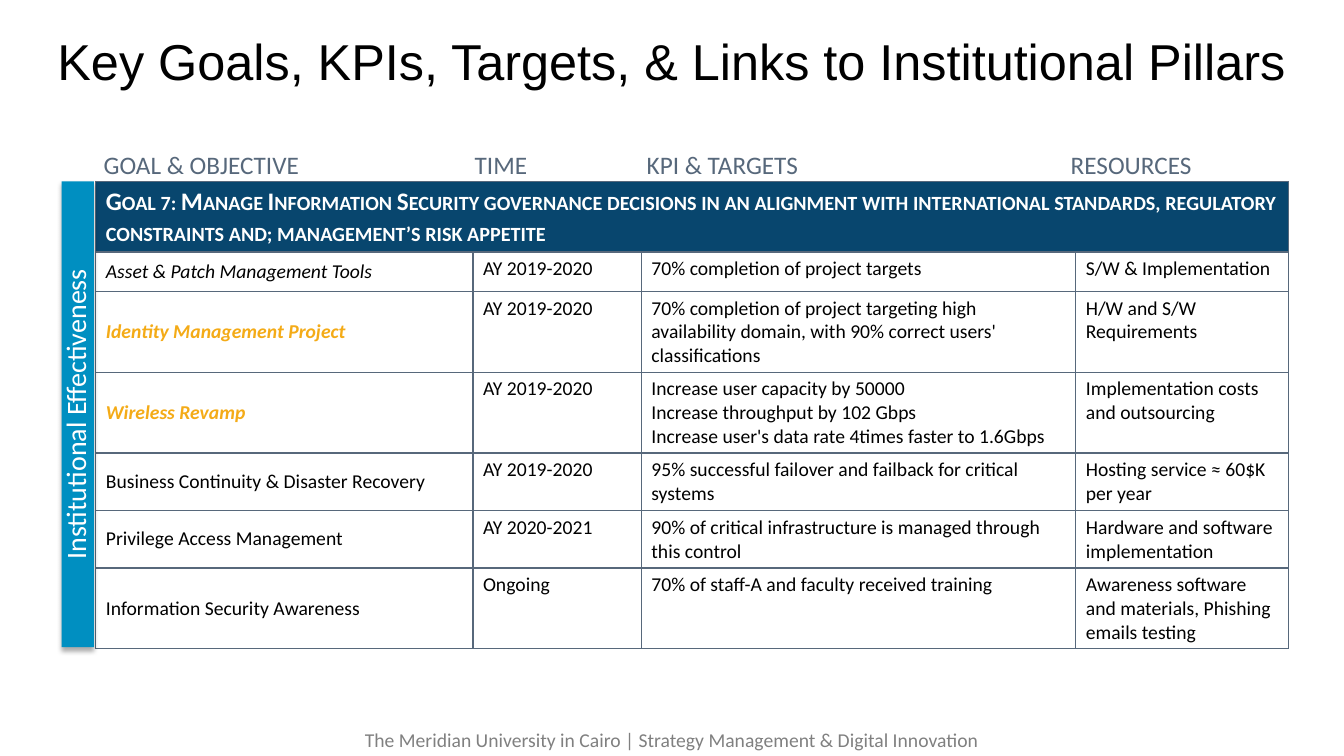
from lxml import etree
from pptx import Presentation
from pptx.dml.color import RGBColor
from pptx.enum.shapes import MSO_SHAPE
from pptx.enum.text import MSO_ANCHOR, PP_ALIGN
from pptx.oxml.ns import qn
from pptx.util import Inches, Pt

CENTER, LEFT = PP_ALIGN.CENTER, PP_ALIGN.LEFT
MIDDLE, TOP = MSO_ANCHOR.MIDDLE, MSO_ANCHOR.TOP
RECTANGLE = MSO_SHAPE.RECTANGLE

SLATE, NAVY, BLUE, AMBER = "57687B", "08466E", "008FC1", "F4AB17"
WHITE, BLACK, GRAY = "FFFFFF", "000000", "808080"

TABLE_LEFT, TABLE_TOP = 7.13, 24
COLUMN_WIDTHS = [28.06, 12.53, 32.33, 15.83]
ROW_HEIGHTS = [9.3, 5.2, 10.7, 10.7, 7.6, 7.6, 10.7]
HEADINGS = ["GOAL & OBJECTIVE", "TIME", "KPI & TARGETS", "RESOURCES"]
HEADING_STOPS = [27.6, 40.4, 71.95]
GOAL = ("Goal 7: Manage Information Security governance decisions in an alignment "
        "with international standards, regulatory constraints and; "
        "management’s risk appetite")
OBJECTIVES = [
    ("Asset & Patch Management Tools", "AY 2019-2020",
     "70% completion of project targets", "S/W & Implementation"),
    ("Identity Management Project", "AY 2019-2020",
     "70% completion of project targeting high availability domain, "
     "with 90% correct users' classifications", "H/W and S/W Requirements"),
    ("Wireless Revamp", "AY 2019-2020",
     "Increase user capacity by 50000\nIncrease throughput by 102 Gbps\n"
     "Increase user's data rate 4times faster to 1.6Gbps",
     "Implementation costs and outsourcing"),
    ("Business Continuity & Disaster Recovery", "AY 2019-2020",
     "95% successful failover and failback for critical systems",
     "Hosting service ≈ 60$K per year"),
    ("Privilege Access Management", "AY 2020-2021",
     "90% of critical infrastructure is managed through this control",
     "Hardware and software implementation"),
    ("Information Security Awareness", "Ongoing",
     "70% of staff-A and faculty received training",
     "Awareness software and materials, Phishing emails testing"),
]
HIGHLIGHT = {"color": AMBER, "bold": True, "italic": True}
OBJECTIVE_STYLES = {
    "Asset & Patch Management Tools": {"italic": True},
    "Identity Management Project": HIGHLIGHT,
    "Wireless Revamp": HIGHLIGHT,
}


def rgb(value):
    return RGBColor.from_string(value)


def add_xml(parent, tag, **attributes):
    return etree.SubElement(parent, qn(tag), attributes)


def add_color(parent, value):
    return add_xml(parent, "a:srgbClr", val=value)


class SlideBuilder:
    """Places elements by percentages of the slide's width and height."""

    def __init__(self, presentation):
        self.width = presentation.slide_width
        self.height = presentation.slide_height
        self.slide = presentation.slides.add_slide(presentation.slide_layouts[6])

    def across(self, share):
        return round(self.width * share / 100)

    def down(self, share):
        return round(self.height * share / 100)

    def box(self, left, top, width, height):
        return self.across(left), self.down(top), self.across(width), self.down(height)

    def fill_text(self, frame, text, size=14, color=BLACK, font="Calibri",
                  align=LEFT, spacing=None, small_caps=False, **styles):
        frame.word_wrap = True
        frame.text = text
        font_values = {"size": Pt(size), "name": font,
                       "bold": False, "italic": False, **styles}
        for paragraph in frame.paragraphs:
            paragraph.alignment = align
            paragraph.line_spacing = spacing
            for run in paragraph.runs:
                for name, value in font_values.items():
                    setattr(run.font, name, value)
                run.font.color.rgb = rgb(color)
                if small_caps:
                    run.font._element.set("cap", "small")

    def text(self, place, text, anchor=TOP, margins=None, **styles):
        frame = self.slide.shapes.add_textbox(*self.box(*place)).text_frame
        frame.vertical_anchor = anchor
        for name, value in (margins or {}).items():
            setattr(frame, name, value)
        self.fill_text(frame, text, **styles)
        return frame

    def tabbed_text(self, place, texts, stops, **styles):
        frame = self.text(place, "\t".join(texts), **styles)
        properties = frame.paragraphs[0]._p.get_or_add_pPr()
        tab_list = add_xml(properties, "a:tabLst")
        for stop in stops:
            add_xml(tab_list, "a:tab", pos=str(self.across(stop)), algn="l")

    def upright_bar(self, place, text, fill, **styles):
        """Adds a bar turned so that its text reads upward within the place."""
        left, top, width, height = self.box(*place)
        shift = (height - width) // 2
        bar = self.slide.shapes.add_shape(
            RECTANGLE, left - shift, top + shift, height, width)
        bar.rotation = 270
        bar.fill.solid()
        bar.fill.fore_color.rgb = rgb(fill)
        bar.line.fill.background()
        bar.text_frame.vertical_anchor = MIDDLE
        self.fill_text(bar.text_frame, text, **styles)
        effects = add_xml(bar._element.spPr, "a:effectLst")
        shadow = add_xml(effects, "a:outerShdw", blurRad=str(Pt(3.5)),
                         dist=str(Pt(2.2)), dir="5400000", rotWithShape="0")
        add_xml(add_color(shadow, BLACK), "a:alpha", val="32000")

    def cell(self, cell, text, fill=None, anchor=TOP, **styles):
        cell.vertical_anchor = anchor
        self.fill_text(cell.text_frame, text, **styles)
        properties = cell._tc.get_or_add_tcPr()
        for side in ("L", "R", "T", "B"):
            border = add_xml(properties, f"a:ln{side}", w=str(Pt(1)))
            add_color(add_xml(border, "a:solidFill"), SLATE)
        if fill:
            cell.fill.solid()
            cell.fill.fore_color.rgb = rgb(fill)
        else:
            cell.fill.background()

    def goal_table(self):
        place = TABLE_LEFT, TABLE_TOP, sum(COLUMN_WIDTHS), sum(ROW_HEIGHTS)
        table = self.slide.shapes.add_table(
            len(ROW_HEIGHTS), len(COLUMN_WIDTHS), *self.box(*place)).table
        table.horz_banding = False
        for column, width in zip(table.columns, COLUMN_WIDTHS):
            column.width = self.across(width)
        for row, height in zip(table.rows, ROW_HEIGHTS):
            row.height = self.down(height)
        table.cell(0, 0).merge(table.cell(0, len(COLUMN_WIDTHS) - 1))
        for index in range(len(COLUMN_WIDTHS)):
            self.cell(table.cell(0, index), "" if index else GOAL, fill=NAVY,
                      size=18, color=WHITE, bold=True, small_caps=True)
        for row_index, texts in enumerate(OBJECTIVES, start=1):
            for index, text in enumerate(texts):
                self.cell(table.cell(row_index, index), text,
                          anchor=TOP if index else MIDDLE,
                          **OBJECTIVE_STYLES.get(text, {}))


def main():
    presentation = Presentation()
    presentation.slide_width = Inches(13.33)
    presentation.slide_height = Inches(7.5)
    builder = SlideBuilder(presentation)
    builder.text((0, 1.07, 100, 14.93),
                 "Key Goals, KPIs, Targets, & Links to Institutional Pillars",
                 anchor=MIDDLE, margins={"margin_left": 0, "margin_right": 0},
                 size=36, font="Arial", align=CENTER, spacing=0.9)
    builder.tabbed_text((6.98, 19.07, 90.55, 5.33), HEADINGS, HEADING_STOPS,
                        size=18, color=SLATE)
    builder.goal_table()
    builder.upright_bar((4.58, TABLE_TOP, 2.4, 61.6), "Institutional Effectiveness",
                        BLUE, size=20, color=WHITE, align=CENTER, spacing=Pt(20))
    builder.text((0, 95.6, 100, 4.4),
                 "The Meridian University in Cairo | "
                 "Strategy Management & Digital Innovation",
                 color=GRAY, align=CENTER)
    presentation.save("out.pptx")


if __name__ == "__main__":
    main()
